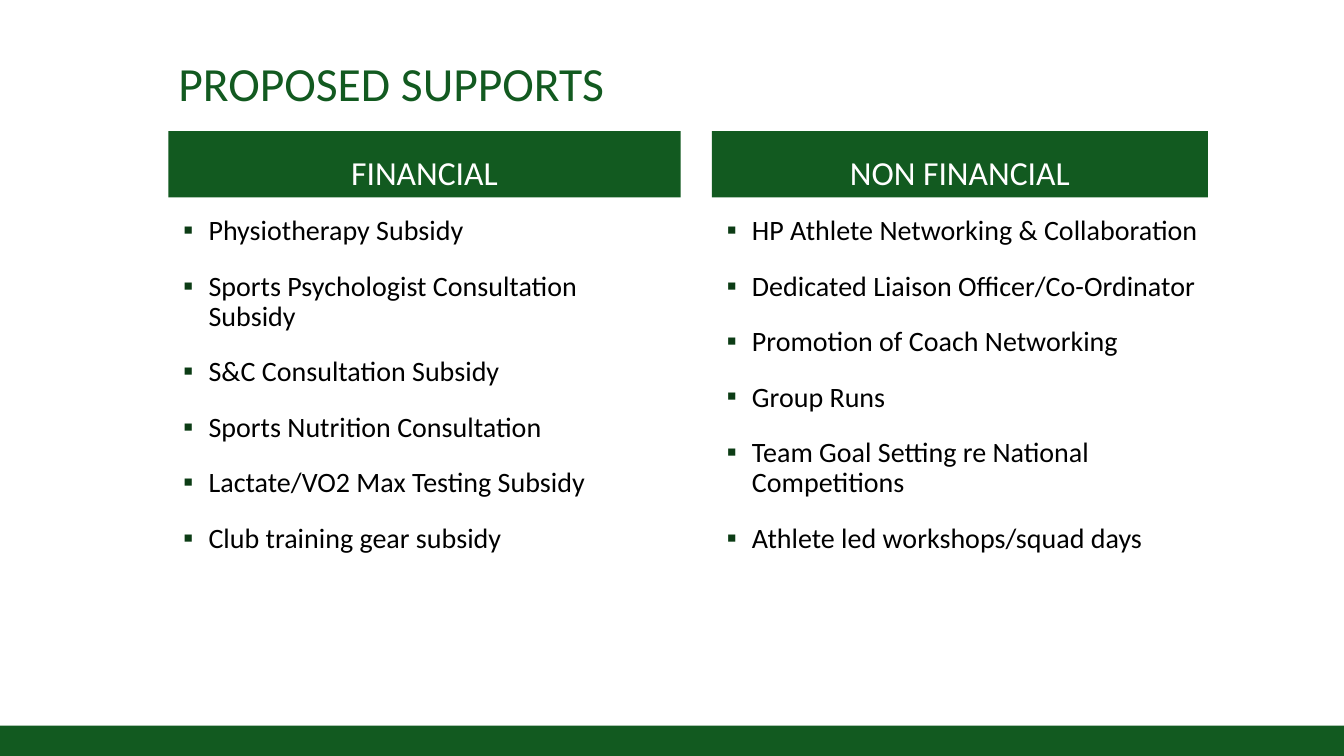
from dataclasses import dataclass

from lxml import etree
from pptx import Presentation
from pptx.dml.color import RGBColor
from pptx.enum.shapes import MSO_SHAPE
from pptx.enum.text import MSO_ANCHOR, MSO_AUTO_SIZE, PP_ALIGN
from pptx.oxml.ns import qn
from pptx.util import Inches, Pt

RECT = MSO_SHAPE.RECTANGLE
LEFT, CENTER = PP_ALIGN.LEFT, PP_ALIGN.CENTER
TOP, BOTTOM = MSO_ANCHOR.TOP, MSO_ANCHOR.BOTTOM
NO_FIT = MSO_AUTO_SIZE.NONE


@dataclass(frozen=True)
class Theme:
    font: str = "Calibri"
    green: str = "125A20"
    mark: str = "0C3C15"
    black: str = "000000"
    white: str = "FFFFFF"
    title: int = 34
    head: int = 24
    body: int = 20


def apply(target, values):
    for name, value in values.items():
        setattr(target, name, value)


class Deck:
    def __init__(self, theme):
        self.theme = theme
        self.show = Presentation()
        apply(self.show, {"slide_width": Inches(13.33), "slide_height": Inches(7.5)})
        self.slide = self.show.slides.add_slide(self.show.slide_layouts[5])

    def frame(self, shape, anchor):
        frame = shape.text_frame
        apply(frame, {"word_wrap": True, "auto_size": NO_FIT, "vertical_anchor": anchor})
        return frame

    def label(self, para, text, size, color, align=LEFT, gap=0):
        para.text = text
        apply(para, {"alignment": align, "line_spacing": 0.9, "space_before": Pt(gap)})
        apply(para.font, {"name": self.theme.font, "size": Pt(size), "bold": False})
        para.font.color.rgb = RGBColor.from_string(color)

    def title(self, text, box):
        shape = self.slide.shapes.title
        apply(shape, dict(zip(("left", "top", "width", "height"), map(Inches, box))))
        para = self.frame(shape, BOTTOM).paragraphs[0]
        self.label(para, text, self.theme.title, self.theme.green)

    def bar(self, box, text=""):
        shape = self.slide.shapes.add_shape(RECT, *map(Inches, box))
        shape.shadow.inherit = False
        shape.fill.solid()
        shape.fill.fore_color.rgb = RGBColor.from_string(self.theme.green)
        shape.line.fill.background()
        if text:
            para = self.frame(shape, BOTTOM).paragraphs[0]
            self.label(para, text, self.theme.head, self.theme.white, CENTER)

    def bullet(self, para):
        props = para._p.get_or_add_pPr()
        props.set("marL", str(Inches(0.3)))
        props.set("indent", str(Inches(-0.25)))
        color = etree.SubElement(props, qn("a:buClr"))
        etree.SubElement(color, qn("a:srgbClr"), val=self.theme.mark)
        etree.SubElement(props, qn("a:buFont"), typeface=self.theme.font)
        etree.SubElement(props, qn("a:buChar"), char="▪")

    def bullets(self, box, items):
        shape = self.slide.shapes.add_textbox(*map(Inches, box))
        frame = self.frame(shape, TOP)
        for i, item in enumerate(items):
            para = frame.add_paragraph() if i else frame.paragraphs[0]
            self.bullet(para)
            self.label(para, item, self.theme.body, self.theme.black, gap=18 if i else 0)


COLUMNS = (
    (1.67, 5.08, "FINANCIAL", (
        "Physiotherapy Subsidy",
        "Sports Psychologist Consultation Subsidy",
        "S&C Consultation Subsidy",
        "Sports Nutrition Consultation",
        "Lactate/VO2 Max Testing Subsidy",
        "Club training gear subsidy",
    )),
    (7.06, 4.92, "NON FINANCIAL", (
        "HP Athlete Networking & Collaboration",
        "Dedicated Liaison Officer/Co-Ordinator",
        "Promotion of Coach Networking",
        "Group Runs",
        "Team Goal Setting re National Competitions",
        "Athlete led workshops/squad days",
    )),
)


def main():
    deck = Deck(Theme())
    deck.bar((0, 7.2, 13.33, 0.3))
    deck.title("PROPOSED SUPPORTS", (1.67, 0.5, 10, 0.66))
    for left, width, head, items in COLUMNS:
        deck.bar((left, 1.3, width, 0.66), head)
        deck.bullets((left, 2.1, 4.92, 4.88), items)
    deck.show.save("out.pptx")


if __name__ == "__main__":
    main()
